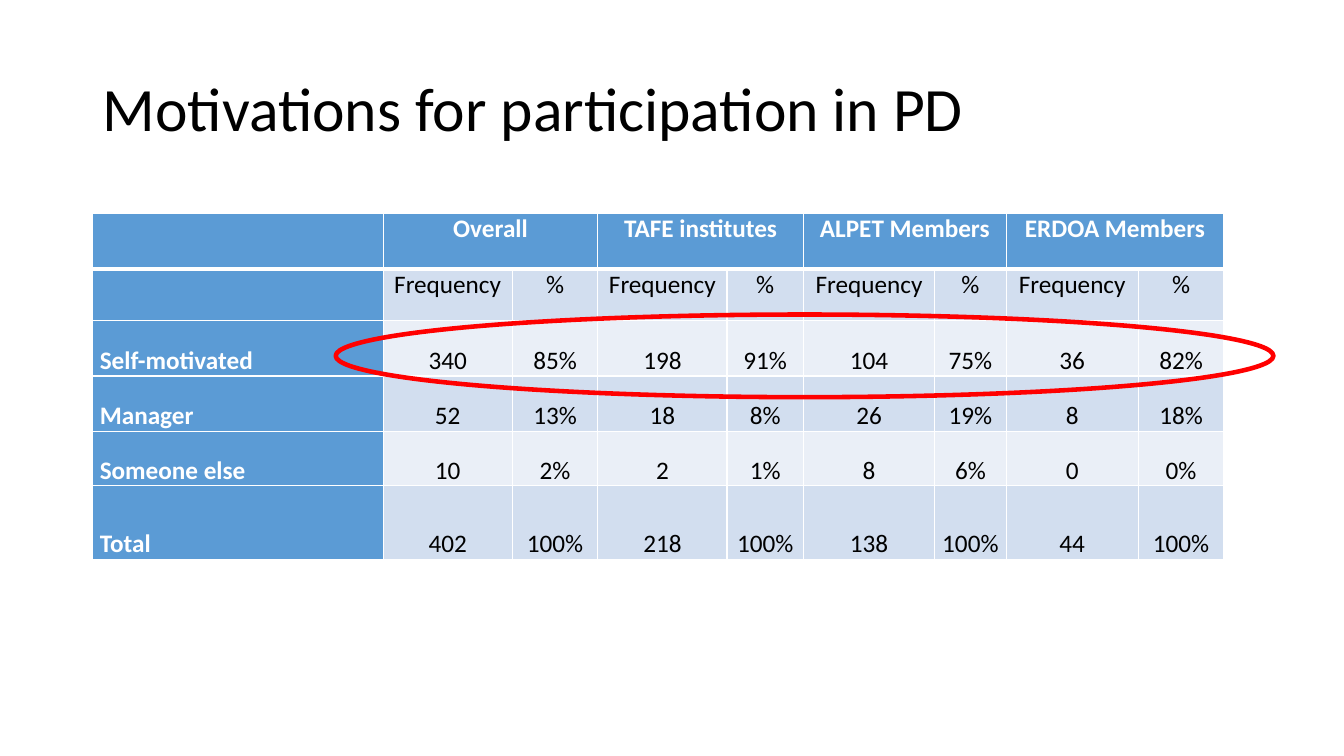
"""Build the slide on motivations for participation in PD."""
import pptx
import pptx.util
import pptx.dml.color
import pptx.enum.shapes
import pptx.enum.text
import pptx.oxml
import pptx.oxml.ns

Inches, Pt = pptx.util.Inches, pptx.util.Pt
RGBColor = pptx.dml.color.RGBColor
PP_ALIGN, MSO_ANCHOR = pptx.enum.text.PP_ALIGN, pptx.enum.text.MSO_ANCHOR

BLUE = RGBColor(0x5B, 0x9B, 0xD5)
BAND_DARK = RGBColor(0xD2, 0xDE, 0xEF)
BAND_LIGHT = RGBColor(0xEA, 0xEF, 0xF7)
WHITE = RGBColor(0xFF, 0xFF, 0xFF)
BLACK = RGBColor(0, 0, 0)
RED = RGBColor(0xFF, 0, 0)

LEFT = 0.92
COLS = [2.88, 1.28, 0.85, 1.28, 0.76, 1.3, 0.71, 1.31, 0.85]
ROWS = [0.55, 0.51, 0.55, 0.55, 0.54, 0.73]
DATA = [
    ["", "Overall", "", "TAFE institutes", "", "ALPET Members", "", "ERDOA Members", ""],
    [""] + ["Frequency", "%"] * 4,
    ["Self-motivated", "340", "85%", "198", "91%", "104", "75%", "36", "82%"],
    ["Manager", "52", "13%", "18", "8%", "26", "19%", "8", "18%"],
    ["Someone else", "10", "2%", "2", "1%", "8", "6%", "0", "0%"],
    ["Total", "402", "100%", "218", "100%", "138", "100%", "44", "100%"],
]


def add_run(p, text, size, color, bold=False):
    r = p.add_run()
    r.text = text
    r.font.name = "Calibri"
    r.font.size = Pt(size)
    r.font.bold = bold
    r.font.color.rgb = color


def set_borders(cell, widths):
    tcPr = cell._tc.get_or_add_tcPr()
    for side, width in widths.items():
        tcPr.append(pptx.oxml.parse_xml(
            f'<a:ln{side} {pptx.oxml.ns.nsdecls("a")} w="{Pt(width)}">'
            f'<a:solidFill><a:srgbClr val="{WHITE}"/></a:solidFill></a:ln{side}>'))


prs = pptx.Presentation()
prs.slide_width, prs.slide_height = Inches(13.33), Inches(7.5)
s = prs.slides.add_slide(prs.slide_layouts[5])

title = s.shapes.title
title.left, title.top = Inches(LEFT), Inches(0.37)
title.width, title.height = Inches(11.5), Inches(1.48)
tf = title.text_frame
tf.vertical_anchor = MSO_ANCHOR.MIDDLE
p = tf.paragraphs[0]
p.alignment = PP_ALIGN.LEFT
p.line_spacing = 0.9
add_run(p, "Motivations for participation in PD", 44, BLACK)

table = s.shapes.add_table(len(ROWS), len(COLS), Inches(LEFT), Inches(2.12),
                           Inches(sum(COLS)), Inches(sum(ROWS))).table
table.horz_banding = False
for column, width in zip(table.columns, COLS):
    column.width = Inches(width)
for row, height in zip(table.rows, ROWS):
    row.height = Inches(height)
for c in range(1, len(COLS), 2):
    table.cell(0, c).merge(table.cell(0, c + 1))

for i, values in enumerate(DATA):
    for j, text in enumerate(values):
        cell = table.cell(i, j)
        heading = i == 0 or j == 0
        set_borders(cell, {"L": 1, "R": 1, "T": 3 if i == 1 else 1, "B": 3 if i == 0 else 1})
        cell.fill.solid()
        cell.fill.fore_color.rgb = BLUE if heading else BAND_DARK if i % 2 else BAND_LIGHT
        if not text:
            continue
        cell.margin_left = cell.margin_right = Inches(0.07)
        cell.margin_top = cell.margin_bottom = 0
        cell.vertical_anchor = MSO_ANCHOR.TOP if i < 2 else MSO_ANCHOR.BOTTOM
        p = cell.text_frame.paragraphs[0]
        p.alignment = PP_ALIGN.CENTER if j else PP_ALIGN.LEFT
        p.space_before = p.space_after = Pt(4 if i < 2 else 2)
        add_run(p, text, 18, WHITE if heading else BLACK, heading)

ring = s.shapes.add_shape(pptx.enum.shapes.MSO_SHAPE.OVAL, Inches(3.33), Inches(3.12),
                          Inches(9.3), Inches(0.82))
ring.shadow.inherit = False
ring.fill.background()
ring.line.color.rgb = RED
ring.line.width = Pt(3.25)

prs.save("out.pptx")
